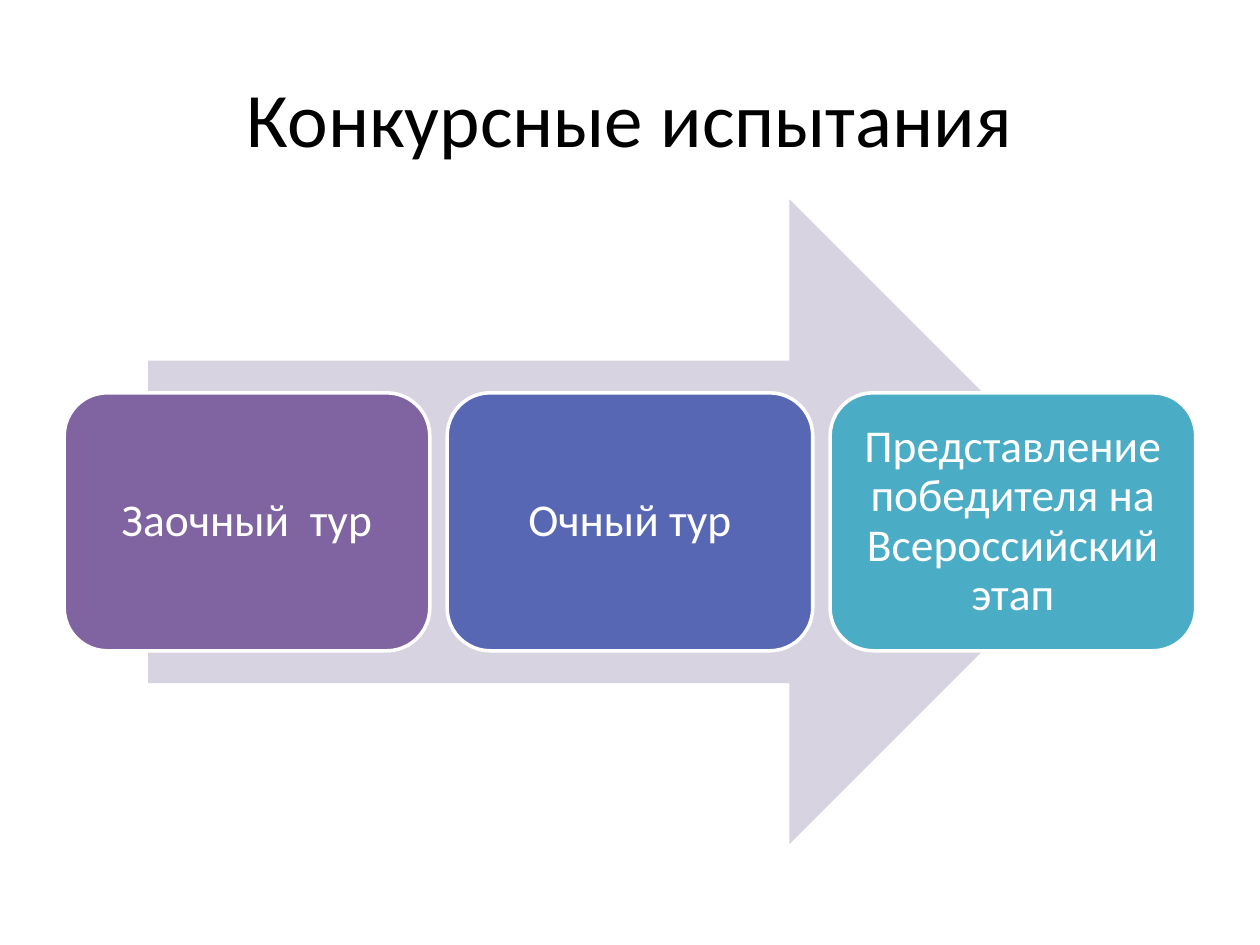
from pptx import Presentation
from pptx.dml.color import RGBColor
from pptx.enum.shapes import MSO_SHAPE
from pptx.enum.text import MSO_ANCHOR, PP_ALIGN
from pptx.util import Cm, Pt

ARROW, ROUNDED = MSO_SHAPE.RIGHT_ARROW, MSO_SHAPE.ROUNDED_RECTANGLE
MIDDLE, CENTER = MSO_ANCHOR.MIDDLE, PP_ALIGN.CENTER

TITLE = "Конкурсные испытания"
STAGES = [
    ("Заочный  тур", "purple"),
    ("Очный тур", "blue"),
    ("Представление победителя на Всероссийский этап", "teal"),
]
COLORS = {
    "black": "000000",
    "white": "FFFFFF",
    "arrow": "D8D3E0",
    "purple": "8064A2",
    "blue": "5767B4",
    "teal": "4BACC6",
}
FONT = "Calibri"

# Lengths in centimetres
SLIDE_W, SLIDE_H = 25.4, 19.05
ARROW_W, ARROW_H, ARROW_TOP = 19.43, 13, 4.02
CARD_W, CARD_H, CARD_GAP = 7.37, 5.2, 0.35
CARD_INSET = 0.28


def rgb(name):
    return RGBColor.from_string(COLORS[name])


def write(tf, text, size, color):
    tf.word_wrap = True
    tf.vertical_anchor = MIDDLE
    p = tf.paragraphs[0]
    p.alignment = CENTER
    r = p.add_run()
    r.text = text
    r.font.name, r.font.size = FONT, Pt(size)
    r.font.color.rgb = rgb(color)
    return p


def add_filled(shapes, kind, left, top, width, height, color):
    sp = shapes.add_shape(kind, Cm(left), Cm(top), Cm(width), Cm(height))
    sp.shadow.inherit = False
    sp.fill.solid()
    sp.fill.fore_color.rgb = rgb(color)
    return sp


def add_card(shapes, left, top, text, color):
    sp = add_filled(shapes, ROUNDED, left, top, CARD_W, CARD_H, color)
    sp.line.color.rgb = rgb("white")
    sp.line.width = Pt(2)
    tf = sp.text_frame
    tf.margin_left = tf.margin_right = Cm(CARD_INSET)
    tf.margin_top = tf.margin_bottom = Cm(CARD_INSET)
    write(tf, text, 26, "white").line_spacing = 0.9


def main():
    prs = Presentation()
    prs.slide_width, prs.slide_height = Cm(SLIDE_W), Cm(SLIDE_H)
    s = prs.slides.add_slide(prs.slide_layouts[5])

    title = s.shapes.title
    title.left, title.top = Cm(1.27), Cm(0.76)
    title.width, title.height = Cm(22.86), Cm(3.18)
    write(title.text_frame, TITLE, 44, "black")

    diagram = s.shapes.add_group_shape().shapes
    arrow = add_filled(diagram, ARROW, (SLIDE_W - ARROW_W) / 2, ARROW_TOP,
                       ARROW_W, ARROW_H, "arrow")
    arrow.line.fill.background()

    step = CARD_W + CARD_GAP
    left = (SLIDE_W - len(STAGES) * step + CARD_GAP) / 2
    top = ARROW_TOP + (ARROW_H - CARD_H) / 2
    for i, (text, color) in enumerate(STAGES):
        add_card(diagram, left + i * step, top, text, color)

    prs.save("out.pptx")


if __name__ == "__main__":
    main()
